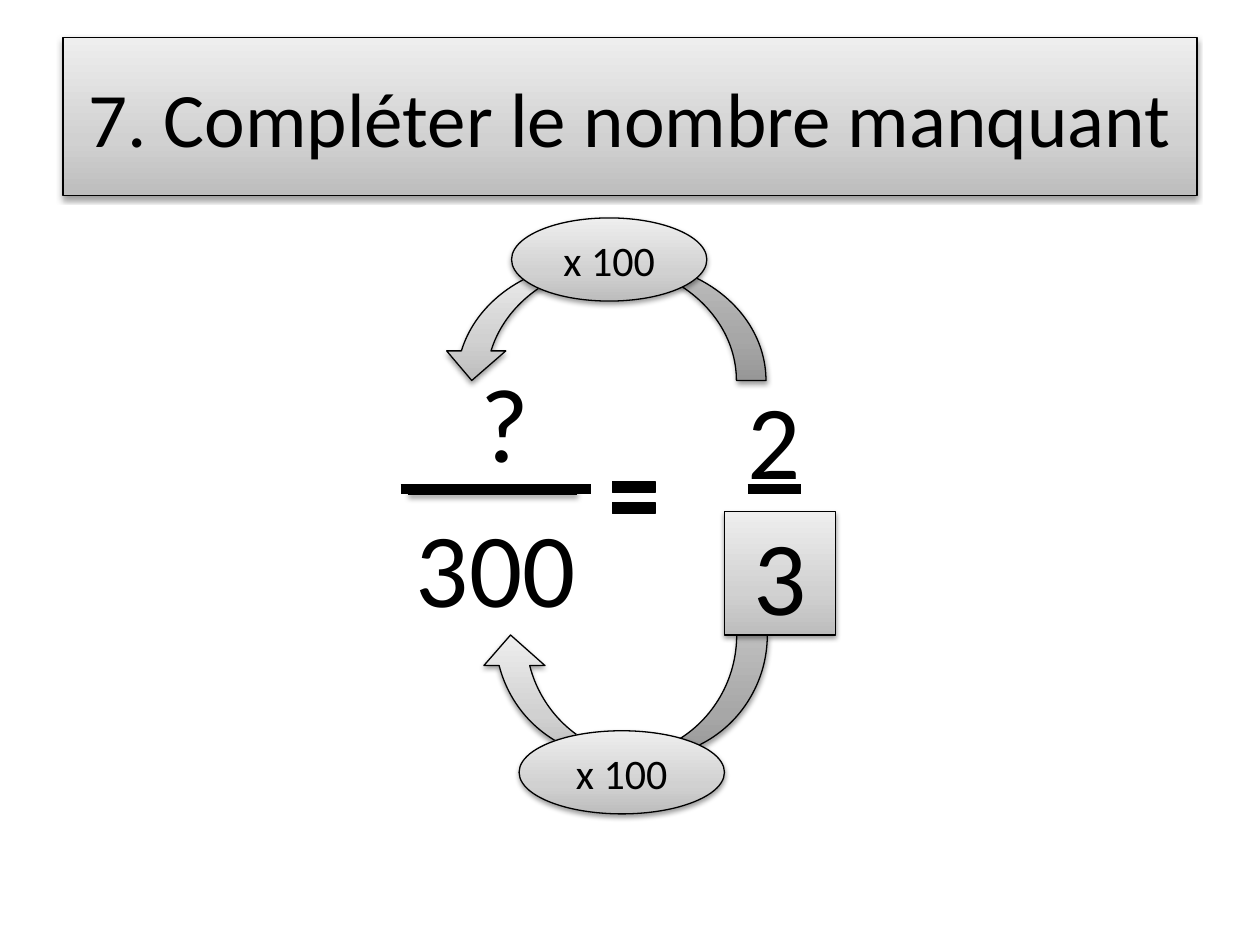
from copy import deepcopy
from dataclasses import dataclass

from pptx import Presentation
from pptx.dml.color import RGBColor
from pptx.enum import shapes, text
from pptx.oxml import ns, xmlchemy
from pptx.util import Inches, Pt

SHAPE = shapes.MSO_SHAPE
FONT = "Calibri"
BLACK = "000000"
GREYS = [(0, "BDBDBD"), (0.35, "D1D1D1"), (1, "EEEEEE")]
DIGIT_SIZE = 60
FACTOR_SIZE = 24


@dataclass
class Panel:
    kind: SHAPE
    left: float
    top: float
    width: float
    height: float
    label: str = ""
    size: int = FACTOR_SIZE
    mirrored: bool = False


@dataclass
class Number:
    label: str
    left: float
    top: float
    width: float
    underlined: bool = False


@dataclass
class Bar:
    left: float
    right: float
    y: float
    weight: float
    shadowed: bool = False


def colour(code: str) -> RGBColor:
    return RGBColor.from_string(code)


def set_shadow(shape, visible: bool) -> None:
    """Give the shape its own effect list, with or without a soft shadow."""
    properties = shape.element.spPr
    for old in properties.findall(ns.qn("a:effectLst")):
        properties.remove(old)
    effects = xmlchemy.OxmlElement("a:effectLst")
    properties.append(effects)
    if not visible:
        return
    shadow = xmlchemy.OxmlElement("a:outerShdw")
    for name, value in (("blurRad", Pt(3.1)), ("dist", Pt(1.6)),
                        ("dir", 90 * 60000), ("rotWithShape", 0)):
        shadow.set(name, str(value))
    tone = xmlchemy.OxmlElement("a:srgbClr")
    tone.set("val", BLACK)
    alpha = xmlchemy.OxmlElement("a:alpha")
    alpha.set("val", "38000")
    tone.append(alpha)
    shadow.append(tone)
    effects.append(shadow)


def set_grey_gradient(shape) -> None:
    fill = shape.fill
    fill.gradient()
    fill.gradient_angle = 90
    stop_list = shape.element.spPr.find(ns.qn("a:gradFill")).find(ns.qn("a:gsLst"))
    stop_list.append(deepcopy(stop_list[-1]))
    for stop, (position, grey) in zip(fill.gradient_stops, GREYS):
        stop.position = position
        stop.color.rgb = colour(grey)


def set_outline(shape, weight: float) -> None:
    shape.line.color.rgb = colour(BLACK)
    shape.line.width = Pt(weight)


def write(shape, label: str, size: int, underlined: bool = False) -> None:
    shape.text_frame.text = label
    paragraph = shape.text_frame.paragraphs[0]
    paragraph.alignment = text.PP_ALIGN.CENTER
    font = paragraph.font
    font.name, font.size = FONT, Pt(size)
    font.color.rgb = colour(BLACK)
    if underlined:
        paragraph.runs[0].font.underline = True


def draw_panel(slide, panel: Panel) -> None:
    shape = slide.shapes.add_shape(panel.kind, Inches(panel.left), Inches(panel.top),
                                   Inches(panel.width), Inches(panel.height))
    set_grey_gradient(shape)
    set_outline(shape, 0.75)
    set_shadow(shape, True)
    if panel.mirrored:
        shape.element.spPr.find(ns.qn("a:xfrm")).set("flipH", "1")
    if panel.label:
        shape.text_frame.vertical_anchor = text.MSO_ANCHOR.MIDDLE
        write(shape, panel.label, panel.size)


def draw_number(slide, number: Number) -> None:
    box = slide.shapes.add_textbox(Inches(number.left), Inches(number.top),
                                   Inches(number.width), Inches(1.11))
    box.text_frame.word_wrap = True
    write(box, number.label, DIGIT_SIZE, number.underlined)


def draw_bar(slide, bar: Bar) -> None:
    line = slide.shapes.add_connector(shapes.MSO_CONNECTOR.STRAIGHT, Inches(bar.left),
                                      Inches(bar.y), Inches(bar.right), Inches(bar.y))
    set_outline(line, bar.weight)
    set_shadow(line, bar.shadowed)


def draw_equals(slide) -> None:
    equals = slide.shapes.add_shape(SHAPE.MATH_EQUAL, Inches(4.8), Inches(3.6),
                                    Inches(0.46), Inches(0.7))
    equals.adjustments[0] = 0.12
    equals.adjustments[1] = 0.118
    equals.fill.solid()
    equals.fill.fore_color.rgb = colour(BLACK)
    set_outline(equals, 0.75)
    set_shadow(equals, False)


NUMBERS = [
    Number("?", 3.71, 2.79, 0.59),
    Number("300", 3.05, 3.94, 1.77),
    Number("2", 5.26, 2.92, 1.77, underlined=True),
]
FRACTION_BARS = [
    Bar(3.24, 4.58, 3.91, 3, shadowed=True),
    Bar(3.18, 4.69, 3.88, 5.75),
]
PANELS = [
    Panel(SHAPE.RECTANGLE, 0.5, 0.3, 9, 1.25, "7. Compléter le nombre manquant", 44),
    Panel(SHAPE.CURVED_UP_ARROW, 3.81, 5.04, 2.28, 0.97, mirrored=True),
    Panel(SHAPE.OVAL, 4.12, 5.8, 1.63, 0.66, "x 100"),
    Panel(SHAPE.CURVED_DOWN_ARROW, 3.51, 2.08, 2.57, 0.94, mirrored=True),
    Panel(SHAPE.OVAL, 4.06, 1.73, 1.55, 0.66, "x 100"),
    Panel(SHAPE.RECTANGLE, 5.75, 4.06, 0.88, 0.98, "3", DIGIT_SIZE),
]


def main() -> None:
    deck = Presentation()
    deck.slide_width, deck.slide_height = Inches(10), Inches(7.5)
    slide = deck.slides.add_slide(deck.slide_layouts[6])

    # The two equal fractions
    for number in NUMBERS:
        draw_number(slide, number)
    draw_equals(slide)
    for bar in FRACTION_BARS:
        draw_bar(slide, bar)

    # Title, multiplication arrows and the framed denominator
    for panel in PANELS:
        draw_panel(slide, panel)

    deck.save("out.pptx")


if __name__ == "__main__":
    main()
